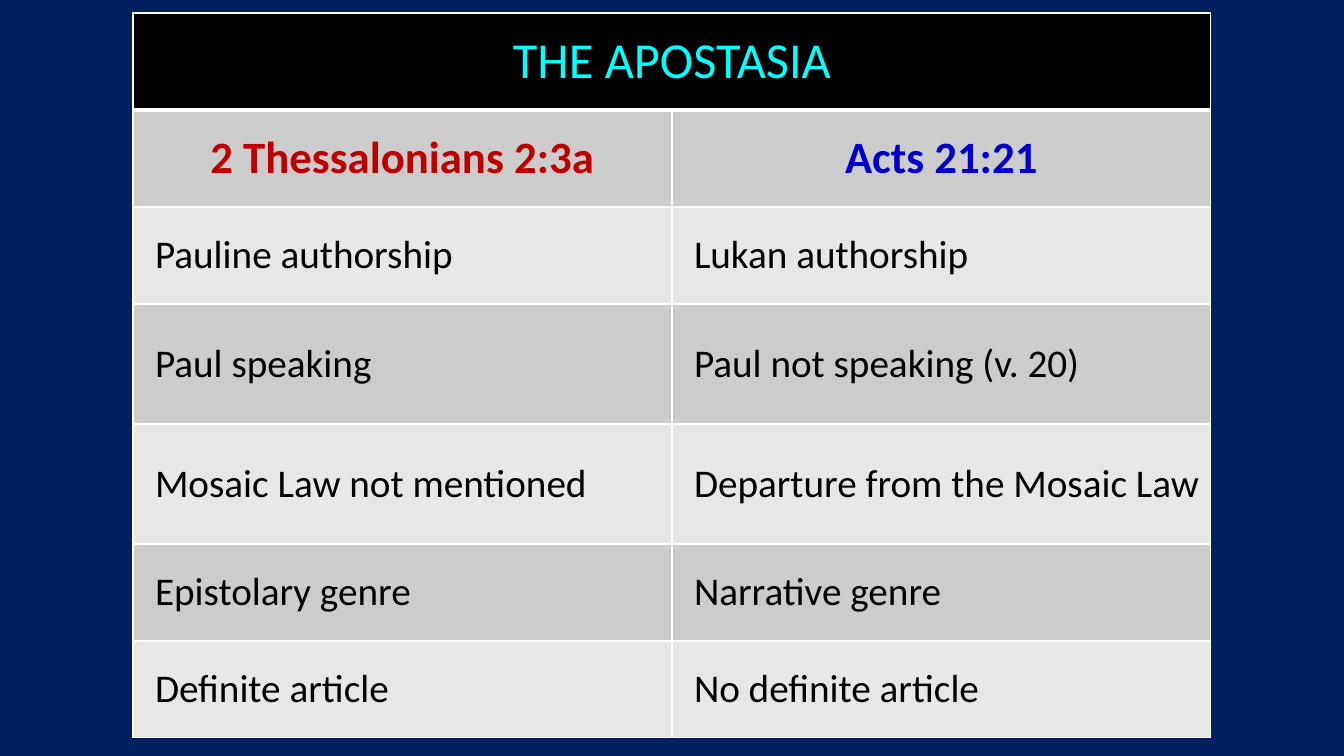
from pptx import Presentation
from pptx import util as u
from pptx.dml.color import RGBColor
from pptx.enum import text
from pptx.oxml import parse_xml
from pptx.oxml.ns import nsdecls

EMU_PER_PX = 914400 / 100.8
FONT = "Calibri"
NAVY, BLACK, WHITE, CYAN = "002060", "000000", "FFFFFF", "00FFFF"
RED, BLUE = "C00000", "0000CC"
BANDS = ["CCCCCC", "E7E7E7"]

TITLE = "THE APOSTASIA"
PASSAGES = [("2 Thessalonians 2:3a", RED), ("Acts 21:21", BLUE)]
CONTRASTS = [
    ("Pauline authorship", "Lukan authorship"),
    ("Paul speaking", "Paul not speaking (v. 20)"),
    ("Mosaic Law not mentioned", "Departure from the Mosaic Law"),
    ("Epistolary genre", "Narrative genre"),
    ("Definite article", "No definite article"),
]
COLUMN_WIDTH = 539
ROW_HEIGHTS = [97, 97, 97, 120, 120, 97, 97]


def px(length):
    return u.Emu(round(length * EMU_PER_PX))


def rgb(color):
    return RGBColor.from_string(color)


def write(cell, words, size=28, color=BLACK, bold=False, centered=False, indent=0):
    cell.vertical_anchor = text.MSO_ANCHOR.MIDDLE
    paragraph = cell.text_frame.paragraphs[0]
    paragraph.alignment = text.PP_ALIGN.CENTER if centered else text.PP_ALIGN.LEFT
    properties = paragraph._p.get_or_add_pPr()
    properties.set("marL", str(px(indent)))
    properties.set("indent", "0")
    run = paragraph.add_run()
    run.text = words
    run.font.name = FONT
    run.font.size = u.Pt(size)
    run.font.bold = bold
    run.font.color.rgb = rgb(color)


class ComparisonSlide:
    def __init__(self, presentation, background):
        blank_layout = presentation.slide_layouts[6]
        self.slide = presentation.slides.add_slide(blank_layout)
        fill = self.slide.background.fill
        fill.solid()
        fill.fore_color.rgb = rgb(background)

    def table(self, left, top, column_widths, row_heights):
        frame = self.slide.shapes.add_table(
            len(row_heights), len(column_widths), px(left), px(top),
            px(sum(column_widths)), px(sum(row_heights)))
        table = frame.table
        for column, width in zip(table.columns, column_widths):
            column.width = px(width)
        for row, height in zip(table.rows, row_heights):
            row.height = px(height)
        return table

    def paint(self, cell, fill, top=1, bottom=1):
        """Fill a cell and rule its four sides in white; widths in points."""
        properties = cell._tc.get_or_add_tcPr()
        for side, width in (("L", 1), ("R", 1), ("T", top), ("B", bottom)):
            properties.append(parse_xml(
                f'<a:ln{side} {nsdecls("a")} w="{u.Pt(width)}"><a:solidFill>'
                f'<a:srgbClr val="{WHITE}"/></a:solidFill></a:ln{side}>'))
        cell.fill.solid()
        cell.fill.fore_color.rgb = rgb(fill)


def main():
    presentation = Presentation()
    presentation.slide_width, presentation.slide_height = px(1344), px(756)
    page = ComparisonSlide(presentation, NAVY)
    table = page.table(133, 13, [COLUMN_WIDTH] * 2, ROW_HEIGHTS)

    for cell in table.rows[0].cells:
        page.paint(cell, BLACK, bottom=3)
    for row in range(1, len(ROW_HEIGHTS)):
        for cell in table.rows[row].cells:
            page.paint(cell, BANDS[(row - 1) % 2], top=3 if row == 1 else 1)

    title_cell = table.cell(0, 0)
    title_cell.merge(table.cell(0, 1))
    write(title_cell, TITLE, size=36, color=CYAN, centered=True)
    for column, (passage, color) in enumerate(PASSAGES):
        write(table.cell(1, column), passage, size=32, color=color, bold=True, centered=True)
    for row, contrast in enumerate(CONTRASTS, start=2):
        for column, words in enumerate(contrast):
            write(table.cell(row, column), words, indent=12)

    presentation.save("out.pptx")


if __name__ == "__main__":
    main()
